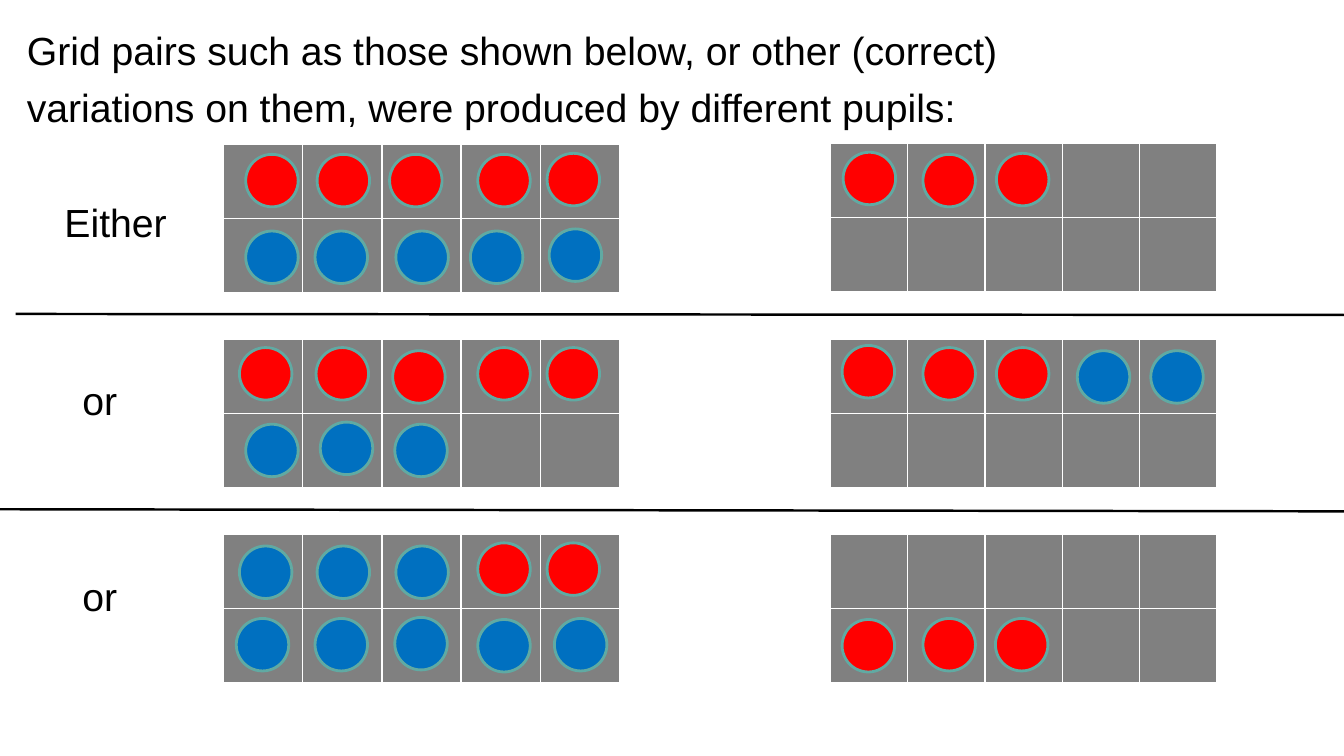
import pptx
import pptx.util
import pptx.dml.color
import pptx.enum.shapes
import pptx.enum.text
import pptx.oxml
import pptx.oxml.ns

HUES = {"ink": "000000", "grid": "808080", "rule": "FFFFFF",
        "red": "FF0000", "blue": "0070C0", "rim": "60AAA3"}
FONT, SIZE = "Arial", 28
DISC = 50
COLS, ROWS = 5, 2
GRID_H = 141
LEFT, RIGHT = (213, 377), (791, 368)  # left edge and width of each grid

HEAD = ["Grid pairs such as those shown below, or other (correct)",
        "variations on them, were produced by different pupils:"]

# Label with its place, tops of both grids, and counters by colour
CASES = [
    ("Either", 52, 184, (138, 137), {
        "red": [(234, 147), (302, 147), (371, 147), (455, 147), (521, 146),
                (803, 145), (879, 147), (949, 146)],
        "blue": [(234, 220), (300, 220), (377, 220), (448, 220), (523, 218)],
    }),
    ("or", 69, 354, (323, 323), {
        "red": [(228, 331), (301, 331), (374, 334), (455, 331), (521, 331),
                (802, 329), (879, 331), (949, 331)],
        "blue": [(234, 404), (305, 402), (376, 404), (1026, 334), (1096, 334)],
    }),
    ("or", 69, 540, (509, 509), {
        "red": [(455, 517), (521, 517), (802, 590), (879, 589), (948, 589)],
        "blue": [(228, 520), (302, 520), (377, 520), (225, 589), (300, 589),
                 (376, 588), (455, 590), (528, 589)],
    }),
]
RULES = [(15, 299, 1280, 300), (0, 485, 1280, 487)]


def px(*vals):
    return [pptx.util.Emu(val * 9525) for val in vals]


def hue(name):
    return pptx.dml.color.RGBColor.from_string(HUES[name])


class Board:
    """Holds the text style and the slide being drawn on."""

    def __init__(self, slide, font, size):
        self.slide, self.font, self.size = slide, font, size
        self.shapes = slide.shapes

    def style(self, frame, lines):
        """Fill a text frame with one paragraph a line."""
        frame.word_wrap = True
        frame.auto_size = pptx.enum.text.MSO_AUTO_SIZE.NONE
        frame.vertical_anchor = pptx.enum.text.MSO_ANCHOR.TOP
        frame.text = "\n".join(lines)
        for i, para in enumerate(frame.paragraphs):
            para.alignment = pptx.enum.text.PP_ALIGN.LEFT
            para.space_before = pptx.util.Pt(7 if i else 0)
            para.font.name = self.font
            para.font.size = pptx.util.Pt(self.size)
            para.font.color.rgb = hue("ink")

    def title(self, x, y, w, h, lines):
        box = self.shapes.title
        box.left, box.top, box.width, box.height = px(x, y, w, h)
        self.style(box.text_frame, lines)

    def label(self, x, y, w, h, text):
        self.style(self.shapes.add_textbox(*px(x, y, w, h)).text_frame, [text])

    def grid(self, x, y, w, h):
        table = self.shapes.add_table(ROWS, COLS, *px(x, y, w, h)).table
        table.first_row = table.horz_banding = False
        for cell in table.iter_cells():
            self.edge(cell)
            cell.fill.solid()
            cell.fill.fore_color.rgb = hue("grid")

    def edge(self, cell):
        """Draw a 1 pt rule on all four sides of a cell."""
        props = cell._tc.get_or_add_tcPr()
        space = pptx.oxml.ns.nsdecls("a")
        for side in ("lnL", "lnR", "lnT", "lnB"):
            props.append(pptx.oxml.parse_xml(
                f'<a:{side} {space} w="12700"><a:solidFill>'
                f'<a:srgbClr val="{HUES["rule"]}"/></a:solidFill></a:{side}>'))

    def disc(self, x, y, tint):
        kind = pptx.enum.shapes.MSO_SHAPE.OVAL
        disc = self.shapes.add_shape(kind, *px(x, y, DISC, DISC))
        disc.shadow.inherit = False
        disc.fill.solid()
        disc.fill.fore_color.rgb = hue(tint)
        disc.line.color.rgb = hue("rim")
        disc.line.width = pptx.util.Pt(2)

    def rule(self, *ends):
        kind = pptx.enum.shapes.MSO_CONNECTOR.STRAIGHT
        line = self.shapes.add_connector(kind, *px(*ends))
        line.line.color.rgb = hue("ink")
        line.line.width = pptx.util.Pt(1.75)
        line._element.spPr.append(
            pptx.oxml.parse_xml(f'<a:effectLst {pptx.oxml.ns.nsdecls("a")}/>'))


def main():
    deck = pptx.Presentation()
    deck.slide_width, deck.slide_height = px(1280, 720)
    board = Board(deck.slides.add_slide(deck.slide_layouts[5]), FONT, SIZE)
    board.title(16, 20, 1190, 110, HEAD)
    for text, x, y, tops, discs in CASES:
        board.label(x, y, 158, 55, text)
        for (left, wide), top in zip((LEFT, RIGHT), tops):
            board.grid(left, top, wide, GRID_H)
        for tint, spots in discs.items():
            for spot in spots:
                board.disc(*spot, tint)
    for ends in RULES:
        board.rule(*ends)
    deck.save("out.pptx")


if __name__ == "__main__":
    main()
